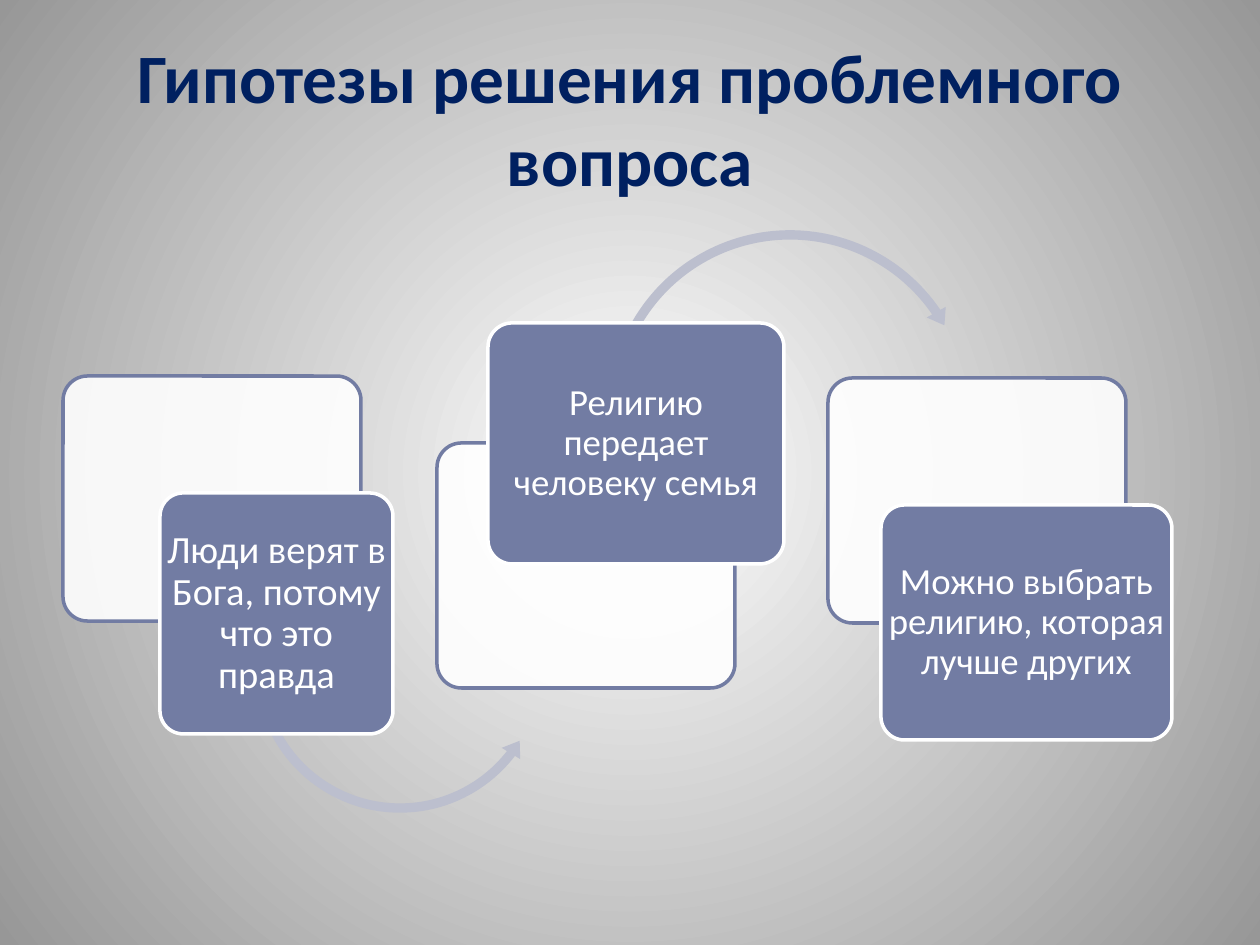
from dataclasses import dataclass

from lxml import etree
from pptx import Presentation
from pptx import util as u
from pptx.dml.color import RGBColor
from pptx.enum import shapes as s, text as t
from pptx.oxml.ns import qn

SCALE = u.Inches(1) / 126  # EMU in one px
FONT = "Calibri"
SLATE, WHITE, PALE, NAVY = "727CA3", "FFFFFF", "BCBFCE", "002060"

Box = tuple[int, int, int, int]


@dataclass
class Card:
    words: str
    size: int
    pad: int
    back: tuple[int, int]
    front: Box


@dataclass
class Arc:
    kind: s.MSO_SHAPE
    box: Box
    adj: tuple[float, ...]


BACK_W, BACK_H = 298, 245
CARDS = [
    Card("Люди верят в Бога, потому что это правда", 22, 6,
         (63, 376), (160, 493, 233, 241)),
    Card("Религию передает человеку семья", 21, 5,
         (437, 443), (488, 323, 296, 241)),
    Card("Можно выбрать религию, которая лучше других", 21, 5,
         (828, 378), (881, 505, 291, 235)),
]
# The arrow that leaves each card; the last card has none
ARCS = [
    Arc(s.MSO_SHAPE.LEFT_CIRCULAR_ARROW, (249, 517, 302, 302),
        (0.031, 3.787, 22.574, 91.277, 0.036)),
    Arc(s.MSO_SHAPE.CIRCULAR_ARROW, (602, 224, 376, 376),
        (0.025, 3.007, 195.419, 125.936, 0.029)),
    None,
]


def px(n: int) -> u.Emu:
    return u.Emu(round(n * SCALE))


def rgb(code: str) -> RGBColor:
    return RGBColor.from_string(code)


def style(font, size: float, code: str, bold: bool = False) -> None:
    font.name, font.size, font.bold = FONT, u.Pt(size), bold
    font.color.rgb = rgb(code)


def draw(slide, kind: s.MSO_SHAPE, box: Box, fill: str, line: str = ""):
    shape = slide.shapes.add_shape(kind, *map(px, box))
    shape.shadow.inherit = False
    shape.fill.solid()
    shape.fill.fore_color.rgb = rgb(fill)
    if line:
        shape.line.color.rgb = rgb(line)
        shape.line.width = u.Pt(2)
    else:
        shape.line.fill.background()
    return shape


def panel(slide, box: Box, fill: str, line: str):
    shape = draw(slide, s.MSO_SHAPE.ROUNDED_RECTANGLE, box, fill, line)
    shape.adjustments[0] = 0.1
    return shape


def draw_back(slide, card: Card) -> None:
    shape = panel(slide, (*card.back, BACK_W, BACK_H), WHITE, SLATE)
    tint = shape.fill._xPr.find(qn("a:solidFill"))[0]
    etree.SubElement(tint, qn("a:alpha"), val="90000")


def draw_arc(slide, arc: Arc) -> None:
    shape = draw(slide, arc.kind, arc.box, PALE)
    for i, value in enumerate(arc.adj):
        shape.adjustments[i] = value


def draw_front(slide, card: Card) -> None:
    panel(slide, card.front, SLATE, WHITE)
    frame = slide.shapes.add_textbox(*map(px, card.front)).text_frame
    frame.word_wrap = True
    frame.vertical_anchor = t.MSO_ANCHOR.MIDDLE
    frame.margin_left = frame.margin_right = px(card.pad)
    frame.margin_top = frame.margin_bottom = px(4)
    para = frame.paragraphs[0]
    para.text = card.words
    para.alignment = t.PP_ALIGN.CENTER
    para.line_spacing = 0.9
    style(para.font, card.size, WHITE)


def paint(slide) -> None:
    fill = slide.background.fill
    fill.gradient()
    for stop, place, code in zip(fill.gradient_stops, (0, 1), (WHITE, "979797")):
        stop.position = place
        stop.color.rgb = rgb(code)
    # Turn the linear gradient into a radial one from the centre
    lin = slide.element.find(".//" + qn("a:lin"))
    ring = etree.Element(qn("a:path"), path="circle")
    etree.SubElement(ring, qn("a:fillToRect"),
                     l="50000", t="50000", r="50000", b="50000")
    lin.getparent().replace(lin, ring)


def add_title(slide, words: str) -> None:
    title = slide.shapes.title
    title.left, title.top, title.width, title.height = map(
        px, (63, 38, 1134, 158))
    frame = title.text_frame
    frame.text = words
    frame.word_wrap = True
    frame.auto_size = t.MSO_AUTO_SIZE.NONE
    frame.vertical_anchor = t.MSO_ANCHOR.MIDDLE
    para = frame.paragraphs[0]
    para.alignment = t.PP_ALIGN.CENTER
    style(para.font, 39.6, NAVY, bold=True)


def main() -> None:
    deck = Presentation()
    deck.slide_width, deck.slide_height = px(1260), px(945)
    slide = deck.slides.add_slide(deck.slide_layouts[5])
    paint(slide)
    add_title(slide, "Гипотезы решения проблемного вопроса")
    # Each step: pale panel, arrow to the next step, labelled panel
    for card, arc in zip(CARDS, ARCS):
        draw_back(slide, card)
        if arc:
            draw_arc(slide, arc)
        draw_front(slide, card)
    deck.save("out.pptx")


if __name__ == "__main__":
    main()
